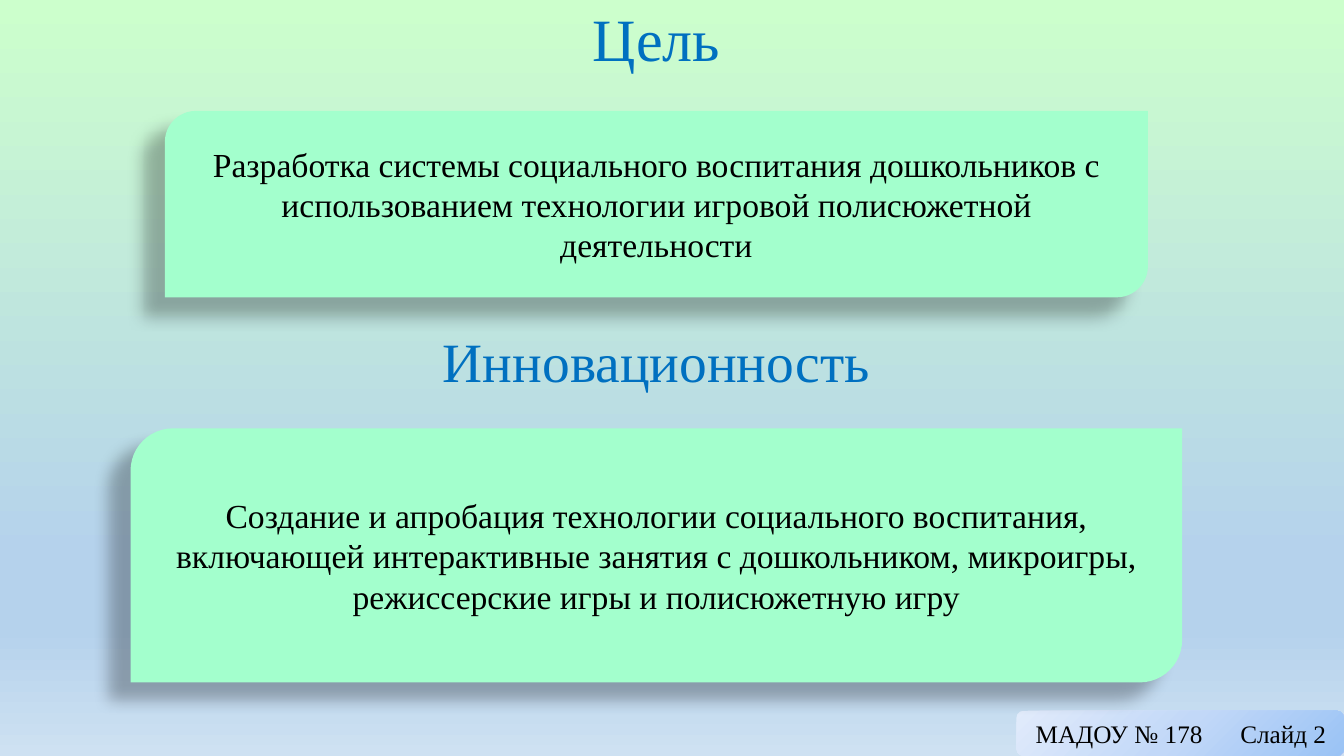
from lxml import etree
from pptx import Presentation
from pptx.dml.color import RGBColor
from pptx.enum.shapes import MSO_SHAPE
from pptx.enum.text import MSO_ANCHOR, MSO_AUTO_SIZE, PP_ALIGN
from pptx.oxml.ns import qn
from pptx.util import Inches, Pt

CENTER, LEFT = PP_ALIGN.CENTER, PP_ALIGN.LEFT
FONT = "Times New Roman"
COLORS = {"heading": "0070C0", "panel": "A3FFCD", "text": "000000", "shadow": "000000"}
BACKGROUND = [(0, "CCFFCC"), (74, "B5D2EC"), (83, "B5D2EC"), (100, "CEE1F2")]
FOOTER_FILL = [(0, "9AC3F5"), (50, "C2D8F8"), (100, "E1EBFB")]

SLIDE_W, SLIDE_H = 13.33, 7.5
CENTER_X = 6.51
HEADING_W, HEADING_H = 11.02, 0.71

# text, top, font size, line spacing
GOAL = ("Цель", 0.08, 42.9, 0.8)
INNOVATION = ("Инновационность", 3.26, 39.6, 0.9)
# paragraphs, top, width, height
PANELS = [
    (["Разработка системы социального воспитания дошкольников с использованием "
      "технологии игровой полисюжетной деятельности"], 1.1, 9.75, 1.85),
    (["Создание и апробация технологии социального воспитания,",
      "включающей интерактивные занятия с дошкольником, микроигры, "
      "режиссерские игры и полисюжетную игру"], 4.25, 10.43, 2.52),
]
FOOTER = ("МАДОУ № 178", "Слайд 2")
FOOTER_W, FOOTER_H, FOOTER_TAB = 3.25, 0.45, 2.03


def sub(parent, tag, **attrs):
    return etree.SubElement(parent, qn(tag), {k: str(v) for k, v in attrs.items()})


def set_gradient(fill, owner, stops):
    """Apply the stops and return the gradient element, still without a direction."""
    fill.gradient()
    grad = next(owner.iter(qn("a:gradFill")))
    for child in list(grad):
        grad.remove(child)
    stop_list = sub(grad, "a:gsLst")
    for position, color in stops:
        sub(sub(stop_list, "a:gs", pos=position * 1000), "a:srgbClr", val=color)
    return grad


def add_soft_shadow(sp):
    sp.shadow.inherit = False
    effects = next(sp.element.iter(qn("a:effectLst")))
    shadow = sub(effects, "a:outerShdw", blurRad=Pt(11.8), dist=Pt(19.7),
                 dir=141 * 60000, algn="ctr", rotWithShape=0)
    sub(sub(shadow, "a:srgbClr", val=COLORS["shadow"]), "a:alpha", val=28000)


def write(sp, paragraphs, size, color, align=CENTER, spacing=None):
    tf = sp.text_frame
    tf.text = "\n".join(paragraphs)
    tf.word_wrap = True
    tf.auto_size = MSO_AUTO_SIZE.NONE
    tf.vertical_anchor = MSO_ANCHOR.MIDDLE
    for p in tf.paragraphs:
        p.alignment = align
        p.line_spacing = spacing
        p.font.name, p.font.size = FONT, Pt(size)
        p.font.color.rgb = RGBColor.from_string(COLORS[color])


def centered(top, width, height):
    return [Inches(v) for v in (CENTER_X - width / 2, top, width, height)]


def write_heading(sp, heading):
    text, _, size, spacing = heading
    write(sp, [text], size, "heading", spacing=spacing)


def main():
    prs = Presentation()
    prs.slide_width, prs.slide_height = Inches(SLIDE_W), Inches(SLIDE_H)
    slide = prs.slides.add_slide(prs.slide_layouts[5])
    shapes = slide.shapes
    grad = set_gradient(slide.background.fill, slide.element, BACKGROUND)
    sub(grad, "a:lin", ang=90 * 60000, scaled=0)

    title = shapes.title
    title.left, title.top, title.width, title.height = centered(
        INNOVATION[1], HEADING_W, HEADING_H)
    write_heading(title, INNOVATION)

    footer = shapes.add_shape(
        MSO_SHAPE.ROUNDED_RECTANGLE, Inches(SLIDE_W - FOOTER_W),
        Inches(SLIDE_H - FOOTER_H), Inches(FOOTER_W), Inches(FOOTER_H))
    footer.shadow.inherit = False
    footer.line.fill.background()
    grad = set_gradient(footer.fill, footer.element, FOOTER_FILL)
    sub(sub(grad, "a:path", path="circle"), "a:fillToRect", l=100000, t=100000)
    write(footer, ["\t".join(FOOTER)], 18, "text", align=LEFT)
    footer.text_frame.margin_left = Inches(0.17)
    footer.text_frame.margin_right = 0
    tabs = sub(footer.text_frame.paragraphs[0]._p.get_or_add_pPr(), "a:tabLst")
    sub(tabs, "a:tab", pos=Inches(FOOTER_TAB), algn="l")
    # The schema puts tab stops ahead of the default run properties.
    tabs.getparent().find(qn("a:defRPr")).addprevious(tabs)

    for paragraphs, top, width, height in PANELS:
        panel = shapes.add_shape(MSO_SHAPE.ROUND_2_DIAG_RECTANGLE,
                                 *centered(top, width, height))
        panel.fill.solid()
        panel.fill.fore_color.rgb = RGBColor.from_string(COLORS["panel"])
        panel.line.fill.background()
        add_soft_shadow(panel)
        write(panel, paragraphs, 24, "text")

    write_heading(shapes.add_textbox(*centered(GOAL[1], HEADING_W, HEADING_H)), GOAL)
    prs.save("out.pptx")


if __name__ == "__main__":
    main()
